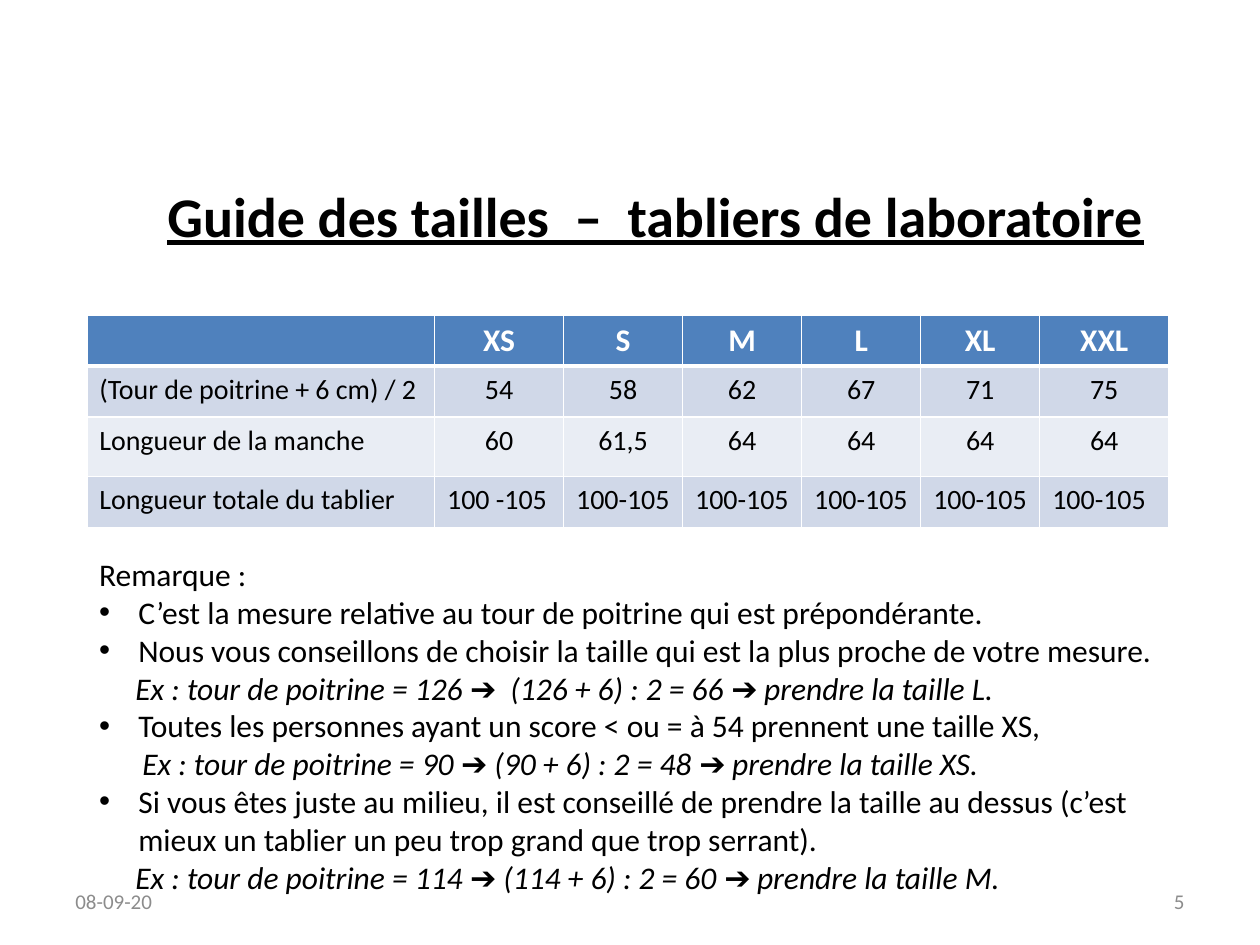
"""Build the size guide slide for laboratory coats."""
import dataclasses

import lxml.etree
import pptx
import pptx.dml.color
import pptx.enum.text
import pptx.oxml
import pptx.oxml.ns
import pptx.util

Cm = pptx.util.Cm
Align = pptx.enum.text.PP_ALIGN
Anchor = pptx.enum.text.MSO_ANCHOR
AutoSize = pptx.enum.text.MSO_AUTO_SIZE


@dataclasses.dataclass(frozen=True)
class Theme:
    font: str = "Calibri"
    text: str = "000000"
    muted: str = "8C8C8C"
    white: str = "FFFFFF"
    header: str = "4F81BD"
    bands: tuple = ("D0D8E8", "E9EDF4")
    title_size: int = 32
    body_size: int = 18
    cell_size: int = 16
    footer_size: int = 12
    border: int = 1
    header_border: int = 3


class SlideBuilder:
    def __init__(self, slide, theme):
        self.slide = slide
        self.theme = theme

    def add_text(self, paragraph, text, size, color=None, align=Align.LEFT, **formats):
        paragraph.alignment = align
        run = paragraph.add_run()
        run.text = text
        values = {"name": self.theme.font, "size": pptx.util.Pt(size), **formats}
        for name, value in values.items():
            setattr(run.font, name, value)
        run.font.color.rgb = pptx.dml.color.RGBColor.from_string(color or self.theme.text)

    def indent(self, paragraph, margin, bullet=False):
        properties = paragraph._p.get_or_add_pPr()
        properties.set("marL", str(int(Cm(margin))))
        properties.set("indent", str(-int(Cm(margin)) if bullet else 0))
        if bullet:
            font = lxml.etree.SubElement(properties, pptx.oxml.ns.qn("a:buFont"))
            font.set("typeface", "Arial")
            mark = lxml.etree.SubElement(properties, pptx.oxml.ns.qn("a:buChar"))
            mark.set("char", "•")

    def text_frame(self, left, top, width, height, **formats):
        shape = self.slide.shapes.add_textbox(Cm(left), Cm(top), Cm(width), Cm(height))
        for name, value in {"word_wrap": True, **formats}.items():
            setattr(shape.text_frame, name, value)
        return shape.text_frame

    def label(self, box, text, size, **formats):
        frame = self.text_frame(*box, vertical_anchor=Anchor.MIDDLE)
        self.add_text(frame.paragraphs[0], text, size, **formats)

    def remarks(self, box, lines):
        frame = self.text_frame(*box, auto_size=AutoSize.SHAPE_TO_FIT_TEXT)
        for index, (text, margin, bullet, italic) in enumerate(lines):
            paragraph = frame.add_paragraph() if index else frame.paragraphs[0]
            self.indent(paragraph, margin, bullet)
            self.add_text(paragraph, text, self.theme.body_size, italic=italic)

    def borders(self, cell, top, bottom):
        properties = cell._tc.get_or_add_tcPr()
        sides = {"L": self.theme.border, "R": self.theme.border, "T": top, "B": bottom}
        for side, points in sides.items():
            properties.append(pptx.oxml.parse_xml(
                f'<a:ln{side} {pptx.oxml.ns.nsdecls("a")} w="{int(pptx.util.Pt(points))}">'
                f'<a:solidFill><a:srgbClr val="{self.theme.white}"/></a:solidFill></a:ln{side}>'))

    def table(self, left, top, widths, heights, rows):
        theme = self.theme
        table = self.slide.shapes.add_table(
            len(rows), len(widths), Cm(left), Cm(top), Cm(sum(widths)), Cm(sum(heights))).table
        for column, width in zip(table.columns, widths):
            column.width = Cm(width)
        for row, height in zip(table.rows, heights):
            row.height = Cm(height)
        for row_index, values in enumerate(rows):
            header = row_index == 0
            fill = theme.header if header else theme.bands[(row_index - 1) % 2]
            size = theme.body_size if header else theme.cell_size
            color = theme.white if header else theme.text
            top_width = theme.header_border if row_index == 1 else theme.border
            bottom_width = theme.header_border if header else theme.border
            for column_index, value in enumerate(values):
                cell = table.cell(row_index, column_index)
                self.borders(cell, top_width, bottom_width)
                cell.fill.solid()
                cell.fill.fore_color.rgb = pptx.dml.color.RGBColor.from_string(fill)
                left_aligned = column_index == 0 or row_index == len(rows) - 1
                if value:
                    self.add_text(cell.text_frame.paragraphs[0], value, size, color,
                                  Align.LEFT if left_aligned else Align.CENTER, bold=header)


def main():
    presentation = pptx.Presentation()
    presentation.slide_width, presentation.slide_height = Cm(25.4), Cm(19.05)
    theme = Theme()
    builder = SlideBuilder(presentation.slides.add_slide(presentation.slide_layouts[6]), theme)

    builder.label((1.27, 17.65, 5.92, 1.02), "08-09-20", theme.footer_size, color=theme.muted)
    builder.label((18.21, 17.65, 5.92, 1.02), "5", theme.footer_size,
                  color=theme.muted, align=Align.RIGHT)
    builder.label((1.32, 2.74, 23.8, 3.18), "Guide des tailles  –  tabliers de laboratoire",
                  theme.title_size, align=Align.CENTER, bold=True, underline=True)
    builder.table(
        1.75, 6.35, [7.01, 2.6] + [2.4] * 4 + [2.6], [1.03, 1.03, 1.2, 1.03],
        [["", "XS", "S", "M", "L", "XL", "XXL"],
         ["(Tour de poitrine + 6 cm) / 2", "54", "58", "62", "67", "71", "75"],
         ["Longueur de la manche", "60", "61,5"] + ["64"] * 4,
         ["Longueur totale du tablier", "100 -105"] + ["100-105"] * 5])
    builder.remarks((1.75, 11.07, 22.38, 7.19), [
        ("Remarque :", 0, False, False),
        ("C’est la mesure relative au tour de poitrine qui est prépondérante.", 0.79, True, False),
        ("Nous vous conseillons de choisir la taille qui est la plus proche de votre mesure.",
         0.79, True, False),
        ("Ex : tour de poitrine = 126 ➔  (126 + 6) : 2 = 66 ➔ prendre la taille L.",
         0.73, False, True),
        ("Toutes les personnes ayant un score < ou = à 54 prennent une taille XS,",
         0.79, True, False),
        ("Ex : tour de poitrine = 90 ➔ (90 + 6) : 2 = 48 ➔ prendre la taille XS.",
         0.87, False, True),
        ("Si vous êtes juste au milieu, il est conseillé de prendre la taille au dessus "
         "(c’est mieux un tablier un peu trop grand que trop serrant).", 0.79, True, False),
        ("Ex : tour de poitrine = 114 ➔ (114 + 6) : 2 = 60 ➔ prendre la taille M.",
         0.73, False, True)])
    presentation.save("out.pptx")


if __name__ == "__main__":
    main()
